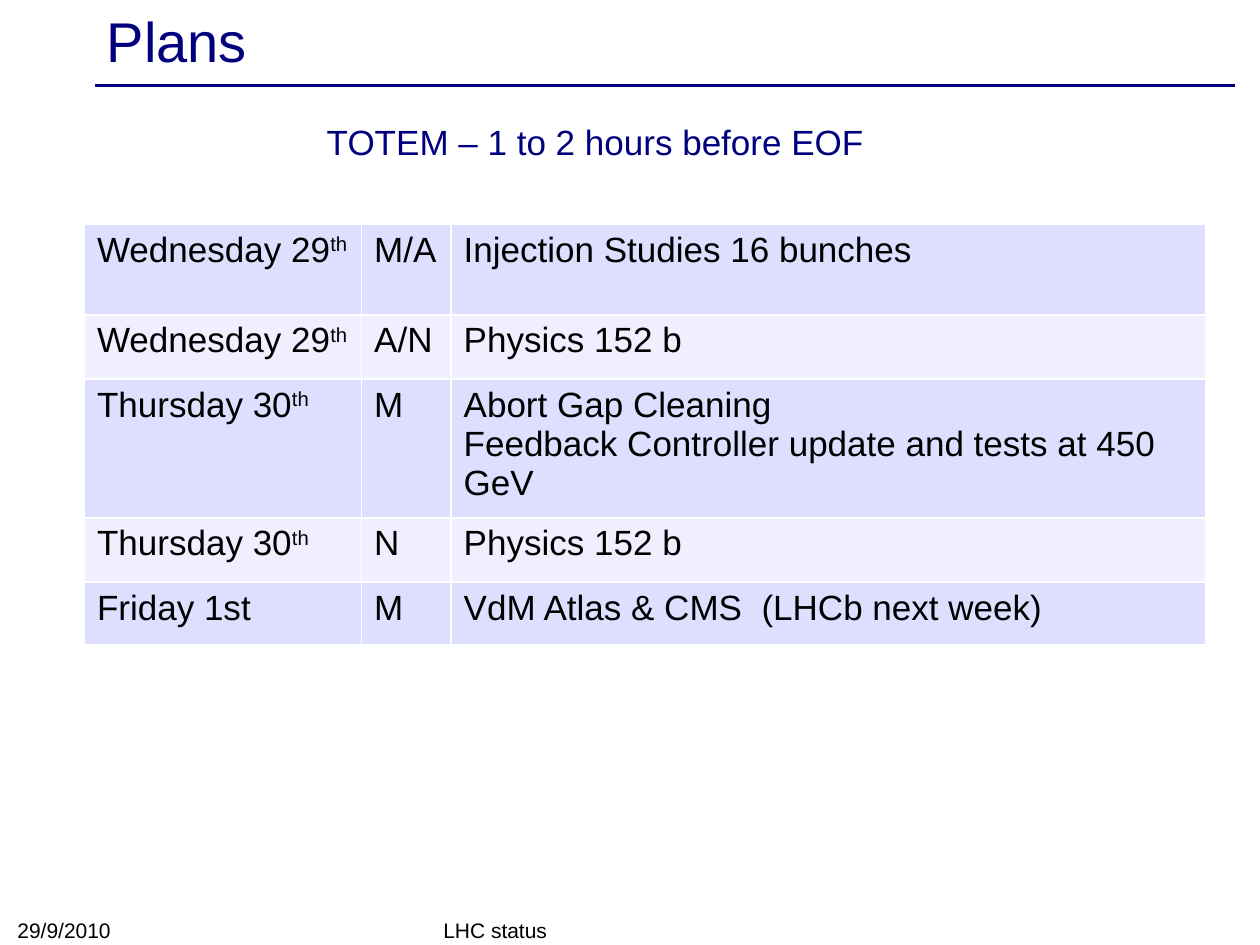
from lxml.etree import SubElement
from pptx import Presentation
from pptx.dml.color import RGBColor
from pptx.enum.shapes import MSO_CONNECTOR as Connector
from pptx.enum.text import MSO_ANCHOR as Anchor, PP_ALIGN as Align
from pptx.oxml.ns import qn
from pptx.util import Inches, Pt

NAVY = RGBColor(0x00, 0x00, 0x7D)
BLACK = RGBColor(0x00, 0x00, 0x00)
BANDS = (RGBColor(0xDE, 0xDE, 0xFF), RGBColor(0xEF, 0xEF, 0xFF))

# A "^" starts a superscript; a line break starts a new paragraph
PLAN = [
    ("Wednesday 29^th", "M/A", "Injection Studies 16 bunches"),
    ("Wednesday 29^th", "A/N", "Physics 152 b"),
    ("Thursday 30^th", "M",
     "Abort Gap Cleaning\nFeedback Controller update and tests at 450 GeV"),
    ("Thursday 30^th", "N", "Physics 152 b"),
    ("Friday 1st", "M", "VdM Atlas & CMS  (LHCb next week)"),
]
COLUMN_WIDTHS = (2.2, 0.71, 5.99)
ROW_HEIGHTS = (0.72, 0.51, 1.03, 0.51, 0.5)


def write_text(frame, text, size=20, color=BLACK, align=Align.LEFT, font="Arial"):
    for index, line in enumerate(text.split("\n")):
        para = frame.add_paragraph() if index else frame.paragraphs[0]
        para.alignment = align
        for raised, part in enumerate(line.split("^")):
            span = para.add_run()
            span.text = part
            span.font.name = font
            span.font.size = Pt(size)
            span.font.color.rgb = color
            if raised:
                span.font._element.set("baseline", "30000")


class PlanSlide:
    def __init__(self, page, accent=NAVY, bands=BANDS):
        self.page = page
        self.accent = accent
        self.bands = bands

    def text(self, text, left, top, width, height, anchor=Anchor.TOP, **style):
        box = self.page.shapes.add_textbox(
            Inches(left), Inches(top), Inches(width), Inches(height))
        box.text_frame.word_wrap = True
        box.text_frame.vertical_anchor = anchor
        write_text(box.text_frame, text, **style)

    def rule(self, left, right, y, width):
        line = self.page.shapes.add_connector(
            Connector.STRAIGHT, Inches(left), Inches(y), Inches(right), Inches(y))
        line.line.color.rgb = self.accent
        line.line.width = Pt(width)
        SubElement(line._element.spPr, qn("a:effectLst"))

    def border(self, cell, color="FFFFFF", width=1):
        properties = cell._tc.get_or_add_tcPr()
        for side in ("a:lnL", "a:lnR", "a:lnT", "a:lnB"):
            edge = SubElement(properties, qn(side), w=str(Pt(width)))
            fill = SubElement(edge, qn("a:solidFill"))
            SubElement(fill, qn("a:srgbClr"), val=color)

    def table(self, rows, left, top, widths, heights):
        table = self.page.shapes.add_table(
            len(rows), len(widths), Inches(left), Inches(top),
            Inches(sum(widths)), Inches(sum(heights))).table
        table.first_row = False
        for column, width in zip(table.columns, widths):
            column.width = Inches(width)
        for index, (row, height) in enumerate(zip(table.rows, heights)):
            row.height = Inches(height)
            for cell, text in zip(row.cells, rows[index]):
                self.border(cell)
                cell.fill.solid()
                cell.fill.fore_color.rgb = self.bands[index % 2]
                write_text(cell.text_frame, text)


def main():
    deck = Presentation()
    deck.slide_width, deck.slide_height = Inches(10), Inches(7.5)
    slide = PlanSlide(deck.slides.add_slide(deck.slide_layouts[6]))

    # Heading
    slide.rule(0.75, 9.8, 0.68, 2)
    slide.text("Plans", 0.75, 0.03, 9, 0.57, Anchor.MIDDLE, size=32, color=NAVY)

    # Schedule
    slide.table(PLAN, 0.67, 1.78, COLUMN_WIDTHS, ROW_HEIGHTS)
    slide.text("TOTEM – 1 to 2 hours before EOF", 2.4, 0.91, 4.65, 0.44,
               color=NAVY, align=Align.CENTER)

    # Footer
    slide.text("LHC status", 3.42, 7.25, 3.17, 0.28, Anchor.BOTTOM, size=12)
    slide.text("29/9/2010", 0.04, 7.24, 2.33, 0.29, Anchor.BOTTOM, size=12)

    deck.save("out.pptx")


if __name__ == "__main__":
    main()
